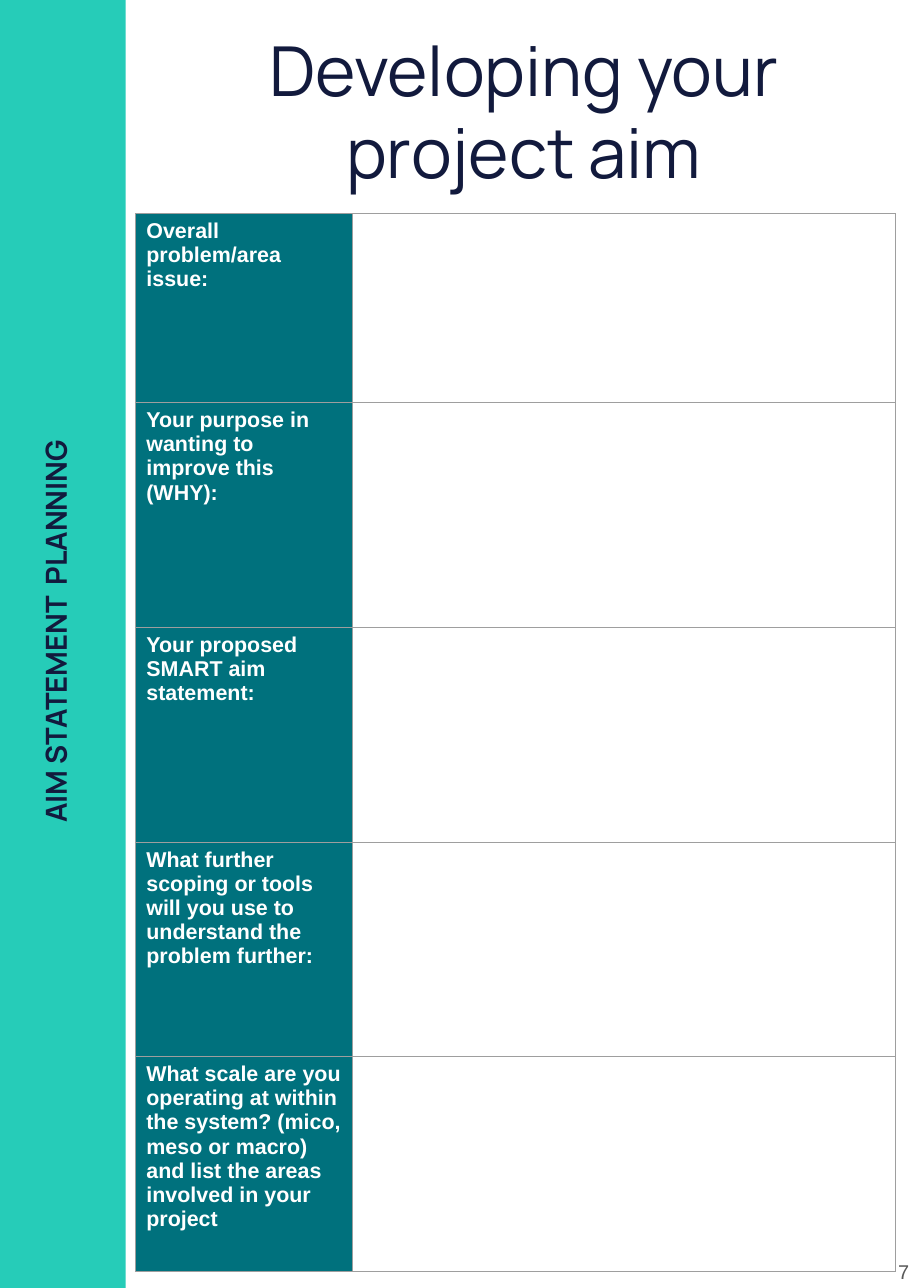
import pptx
import pptx.dml.color
import pptx.enum.shapes
import pptx.enum.text
import pptx.oxml
import pptx.oxml.ns
import pptx.util

Cm = pptx.util.Cm
Pt = pptx.util.Pt
RGBColor = pptx.dml.color.RGBColor
Align = pptx.enum.text.PP_ALIGN
Anchor = pptx.enum.text.MSO_ANCHOR

TURQUOISE = RGBColor(0x26, 0xCC, 0xB8)
TEAL = RGBColor(0x00, 0x71, 0x7D)
NAVY = RGBColor(0x12, 0x1A, 0x3D)
WHITE = RGBColor(0xFF, 0xFF, 0xFF)
GREY = RGBColor(0x59, 0x59, 0x59)
BORDER = RGBColor(0x9E, 0x9E, 0x9E)

HEADING_FONT = "Manrope"
BODY_FONT = "Arial"

QUESTIONS = [
    ("Overall problem/area issue:", 4.36),
    ("Your purpose in wanting to improve this (WHY):", 5.18),
    ("Your proposed SMART aim statement:", 4.95),
    ("What further scoping or tools will you use to understand the problem further:", 4.95),
    ("What scale are you operating at within the system? (mico, meso or macro) "
     "and list the areas involved in your project", 4.95),
]


class Worksheet:
    def __init__(self, deck):
        self.page = deck.slides.add_slide(deck.slide_layouts[5])
        self.shapes = self.page.shapes

    def set_text(self, frame, text, font, size, color, bold=False, align=Align.LEFT):
        frame.word_wrap = True
        para = frame.paragraphs[0]
        para.text = text
        para.alignment = align
        para.font.name = font
        para.font.size = Pt(size)
        para.font.color.rgb = color
        para.font.bold = bold

    def inset(self, frame, margin, anchor):
        frame.auto_size = pptx.enum.text.MSO_AUTO_SIZE.NONE
        frame.vertical_anchor = anchor
        frame.margin_left = frame.margin_right = Cm(margin)
        frame.margin_top = frame.margin_bottom = Cm(margin)

    def title(self, text, left, top, width, height):
        box = self.shapes.title
        box.left, box.top, box.width, box.height = map(Cm, (left, top, width, height))
        self.inset(box.text_frame, 0.25, Anchor.TOP)
        self.set_text(box.text_frame, text, HEADING_FONT, 45, NAVY, align=Align.CENTER)

    def sidebar(self, width, height):
        bar = self.shapes.add_shape(
            pptx.enum.shapes.MSO_SHAPE.RECTANGLE, 0, 0, Cm(width), Cm(height))
        bar.shadow.inherit = False
        bar.fill.solid()
        bar.fill.fore_color.rgb = TURQUOISE
        bar.line.fill.background()

    def label(self, text, left, top, width, height, margin, anchor, rotation=0, **style):
        box = self.shapes.add_textbox(*map(Cm, (left, top, width, height)))
        box.rotation = rotation
        self.inset(box.text_frame, margin, anchor)
        self.set_text(box.text_frame, text, **style)

    def border(self, cell):
        properties = cell._tc.get_or_add_tcPr()
        for side in ("lnL", "lnR", "lnT", "lnB"):
            properties.append(pptx.oxml.parse_xml(
                f'<a:{side} {pptx.oxml.ns.nsdecls("a")} w="{Pt(0.75)}"><a:solidFill>'
                f'<a:srgbClr val="{BORDER}"/></a:solidFill></a:{side}>'))

    def question_table(self, questions, left, top, widths):
        heights = [height for text, height in questions]
        table = self.shapes.add_table(
            len(questions), len(widths),
            *map(Cm, (left, top, sum(widths), sum(heights)))).table
        table.first_row = table.horz_banding = False
        for column, width in zip(table.columns, widths):
            column.width = Cm(width)
        for row, (text, height) in zip(table.rows, questions):
            row.height = Cm(height)
            question, answer = row.cells
            self.border(question)
            self.border(answer)
            question.fill.solid()
            question.fill.fore_color.rgb = TEAL
            answer.fill.background()
            self.set_text(question.text_frame, text, BODY_FONT, 14, WHITE, bold=True)


def main():
    deck = pptx.Presentation()
    deck.slide_width, deck.slide_height = Cm(21), Cm(29.7)
    sheet = Worksheet(deck)
    sheet.sidebar(2.9, 29.7)
    sheet.title("Developing your project aim", 3.5, 0.38, 17.15, 4.5)
    sheet.label("AIM STATEMENT  PLANNING", -12.9, 13.9, 28.37, 1.32, 0.25, Anchor.TOP,
                rotation=270, font=HEADING_FONT, size=19, color=NAVY, bold=True,
                align=Align.CENTER)
    sheet.question_table(QUESTIONS, 3.12, 4.93, [5, 12.52])
    sheet.label("7", 20.02, 28.19, 1.27, 2.26, 0.33, Anchor.MIDDLE,
                font=BODY_FONT, size=13, color=GREY, align=Align.RIGHT)
    deck.save("out.pptx")


if __name__ == "__main__":
    main()
